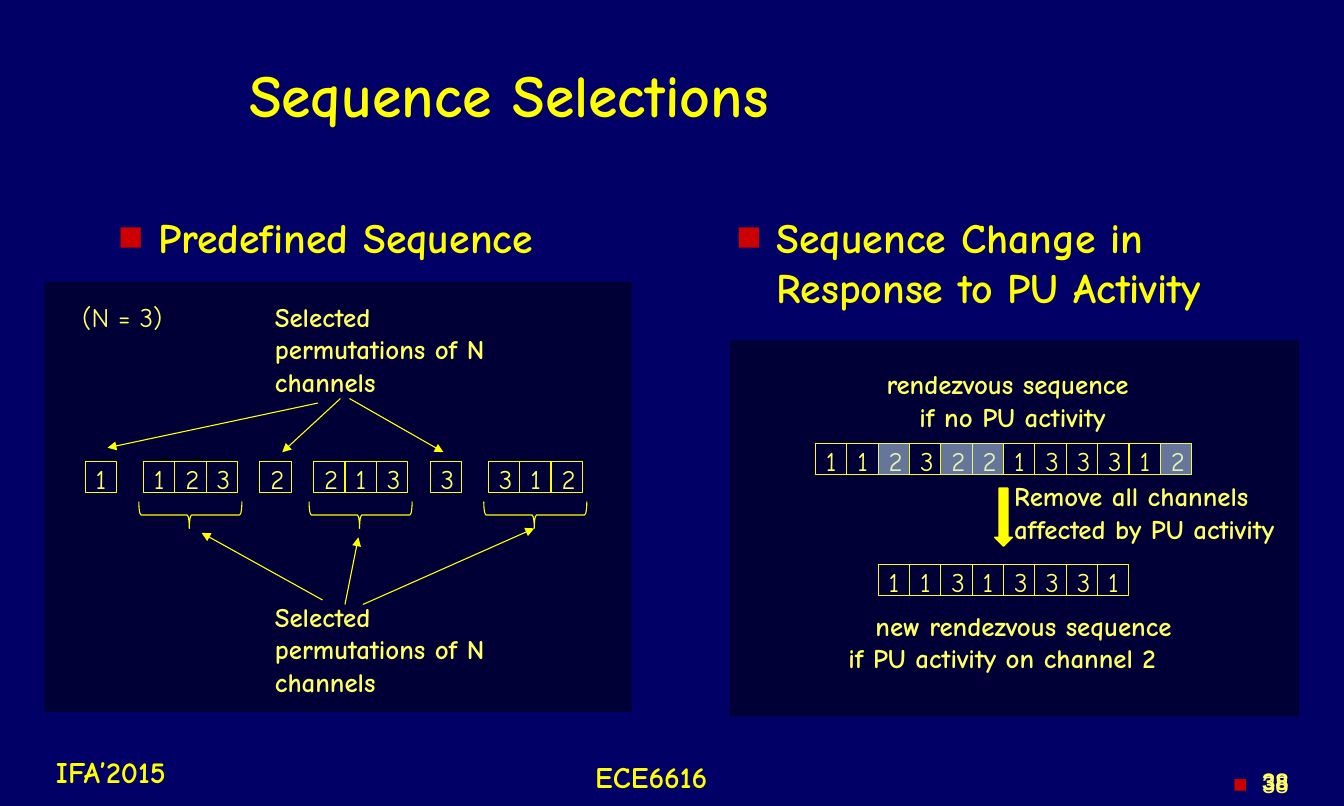
from lxml import etree
from pptx import Presentation
from pptx import util as u
from pptx.dml.color import RGBColor
from pptx.enum import shapes, text
from pptx.oxml import ns

PX = 9525
CELL = 28
YELLOW, PALE, RED = "FFFF00", "FFFF66", "CC0000"
NAVY, PANEL, BLOCKED = "000066", "000036", "CCECFF"
LEFT, CENTER, RIGHT = text.PP_ALIGN.LEFT, text.PP_ALIGN.CENTER, text.PP_ALIGN.RIGHT
SELECTED = "Selected permutations of N channels"


def px(*lengths):
    return [u.Emu(length * PX) for length in lengths]


def color(hex_code):
    return RGBColor.from_string(hex_code)


def add_xml(parent, tag, **attributes):
    return etree.SubElement(parent, ns.qn(tag), attributes)


def add_bullet(paragraph, indent):
    props = paragraph._p.get_or_add_pPr()
    props.set("marL", str(indent * PX))
    props.set("indent", str(-indent * PX))
    add_xml(add_xml(props, "a:buClr"), "a:srgbClr", val=RED)
    add_xml(props, "a:buFont", typeface="Arial")
    add_xml(props, "a:buChar", char="■")


def write(frame, wording, size=18, hue=PALE, bold=True, font="Comic Neue",
          aligns=(LEFT,), anchor=text.MSO_ANCHOR.TOP, wrap=True, spacing=None, indent=0):
    frame.word_wrap = wrap
    frame.vertical_anchor = anchor
    frame.text = wording
    for paragraph, align in zip(frame.paragraphs, aligns):
        paragraph.alignment = align
        if spacing:
            paragraph.line_spacing = spacing
        if indent:
            add_bullet(paragraph, indent)
        for run in paragraph.runs:
            run.font.name = font
            run.font.size = u.Pt(size)
            run.font.bold = bold
            run.font.color.rgb = color(hue)


def label(slide, box, wording, **style):
    write(slide.shapes.add_textbox(*px(*box)).text_frame, wording, **style)


def block(slide, kind, box, fill=None, line=None):
    shape = slide.shapes.add_shape(kind, *px(*box))
    shape.shadow.inherit = False
    if fill:
        shape.fill.solid()
        shape.fill.fore_color.rgb = color(fill)
    else:
        shape.fill.background()
    if line:
        shape.line.color.rgb = color(line)
        shape.line.width = u.Pt(0.75)
    else:
        shape.line.fill.background()
    return shape


def rectangle(slide, box, **style):
    return block(slide, shapes.MSO_SHAPE.RECTANGLE, box, **style)


def channels(slide, left, top, numbers):
    for i, number in enumerate(numbers):
        cell = rectangle(slide, (left + i * CELL, top, CELL, CELL), line=YELLOW)
        write(cell.text_frame, number, bold=False, spacing=0.9)


def block_channel(slide, left, top, numbers, busy):
    for i, number in enumerate(numbers):
        if number == busy:
            veil = rectangle(slide, (left + i * CELL, top, CELL, CELL), fill=BLOCKED)
            tint = veil.fill._xPr.find(".//" + ns.qn("a:srgbClr"))
            add_xml(tint, "a:alpha", val="50000")


def brace(slide, center):
    shape = block(slide, shapes.MSO_SHAPE.LEFT_BRACE, (center - 12, 414, 24, 92), line=YELLOW)
    shape.rotation = 270
    shape.adjustments[0] = 0.08
    shape.adjustments[1] = 0.49


def pointer(slide, start, end):
    arrow = slide.shapes.add_connector(shapes.MSO_CONNECTOR.STRAIGHT, *px(*start, *end))
    arrow.line.color.rgb = color(YELLOW)
    arrow.line.width = u.Pt(0.75)
    add_xml(arrow.line._get_or_add_ln(), "a:tailEnd", type="triangle")
    add_xml(arrow._element.spPr, "a:effectLst")


def predefined_sequence(slide):
    rectangle(slide, (40, 252, 524, 384), fill=PANEL)
    label(slide, (96, 184, 520, 64), "Predefined Sequence", size=28, hue=YELLOW, indent=36)
    label(slide, (64, 264, 128, 38), "(N = 3)", bold=False)
    for top in (264, 532):
        label(slide, (236, top, 224, 97), SELECTED)
    for left, numbers in ((76, "1"), (128, "123"), (232, "2"),
                          (280, "213"), (384, "3"), (436, "312")):
        channels(slide, left, 412, numbers)
        if len(numbers) > 1:
            brace(slide, left + len(numbers) * CELL // 2)
    for start, end in (((284, 360), (96, 400)), ((304, 356), (252, 404)),
                       ((312, 356), (396, 404)), ((288, 536), (180, 476)),
                       ((308, 540), (320, 480)), ((324, 540), (477, 472))):
        pointer(slide, start, end)


def sequence_change(slide):
    sequence, busy = "112322133312", "2"
    rectangle(slide, (652, 304, 508, 336), fill=PANEL)
    label(slide, (648, 184, 520, 124), "Sequence Change in Response to PU Activity",
          size=28, hue=YELLOW, indent=36)
    label(slide, (760, 324, 288, 68), "rendezvous sequence \nif no PU activity",
          aligns=(CENTER, CENTER))
    channels(slide, 728, 396, sequence)
    block_channel(slide, 728, 396, sequence, busy)
    block(slide, shapes.MSO_SHAPE.DOWN_ARROW, (888, 436, 16, 52), fill=YELLOW, line=YELLOW)
    label(slide, (896, 424, 304, 68), "Remove all channels affected by PU activity")
    channels(slide, 784, 504, sequence.replace(busy, ""))
    label(slide, (748, 540, 332, 68), "new rendezvous sequence\nif PU activity on channel 2",
          aligns=(CENTER, LEFT))


def footer(slide):
    for box, wording in (((28, 672, 142, 39), "IFA’2015"), ((514, 677, 135, 39), "ECE6616")):
        label(slide, box, wording, size=20, hue=YELLOW, aligns=(CENTER,),
              wrap=False, spacing=0.9)
    for top, bold, indent in ((680, True, 0), (683, False, 26)):
        label(slide, (1080, top, 80, 32), "38", size=16, font="Arial", bold=bold,
              aligns=(RIGHT,), indent=indent)


def main():
    deck = Presentation()
    deck.slide_width, deck.slide_height = px(1200, 720)
    slide = deck.slides.add_slide(deck.slide_layouts[6])
    slide.background.fill.solid()
    slide.background.fill.fore_color.rgb = color(NAVY)
    label(slide, (213, 40, 947, 88), "Sequence Selections", size=40, hue=YELLOW,
          anchor=text.MSO_ANCHOR.MIDDLE)
    predefined_sequence(slide)
    sequence_change(slide)
    footer(slide)
    deck.save("out.pptx")


if __name__ == "__main__":
    main()
